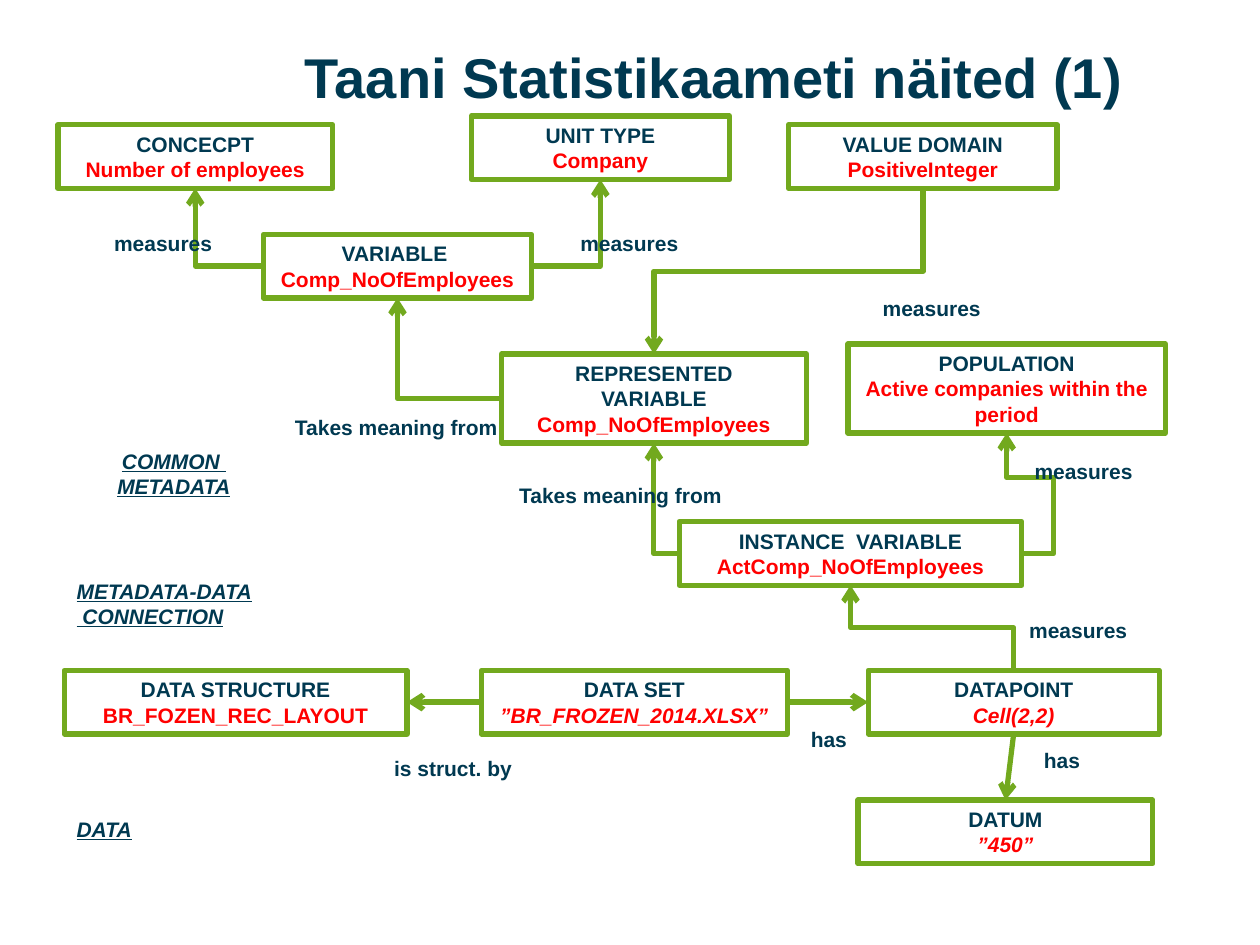
"""Build the slide of Danish statistics examples: linked metadata and data boxes."""
import pptx
import pptx.util
import pptx.dml.color
import pptx.enum.shapes
import pptx.enum.text
import pptx.oxml
import pptx.oxml.ns
from lxml import etree

COLORS = {"ink": "003951", "value": "FF0000", "line": "72A91E"}
FONT = "Arial"
SLIDE_WIDTH, SLIDE_HEIGHT = pptx.util.Inches(10), pptx.util.Inches(7.5)
COLUMNS = 100
CELL = SLIDE_WIDTH / COLUMNS
TOP, LEFT, BOTTOM, RIGHT = range(4)
LOW, TALL = 5.05, 7.07
DATA_ROW = 53.2
ALIGN = {"l": pptx.enum.text.PP_ALIGN.LEFT, "c": pptx.enum.text.PP_ALIGN.CENTER,
         "r": pptx.enum.text.PP_ALIGN.RIGHT}

TITLE = ("Taani Statistikaameti näited (1)", (23.2, 2.9, 67.4, 6.4))

CONCEPTS = {
    "variable": ((20.9, 18.6, 21.3, LOW), ["VARIABLE "], "Comp_NoOfEmployees", False),
    "represented": ((39.8, 28.1, 24.2, TALL), ["REPRESENTED", "VARIABLE"], "Comp_NoOfEmployees", False),
    "instance": ((53.9, 41.4, 27.2, LOW), ["INSTANCE  VARIABLE"], "ActComp_NoOfEmployees", False),
    "population": ((67.3, 27.3, 25.2, TALL), ["POPULATION"], "Active companies within the period", False),
    "datapoint": ((68.9, DATA_ROW, 23.1, LOW), ["DATAPOINT"], "Cell(2,2)", True),
    "datum": ((68.1, 63.5, 23.4, LOW), ["DATUM"], "”450”", True),
    "data set": ((38.2, DATA_ROW, 24.3, LOW), ["DATA SET"], "”BR_FROZEN_2014.XLSX”", True),
    "structure": ((5.1, DATA_ROW, 27.2, LOW), ["DATA STRUCTURE"], "BR_FOZEN_REC_LAYOUT", False),
    "domain": ((62.6, 9.9, 21.3, LOW), ["VALUE DOMAIN"], "PositiveInteger", False),
    "unit": ((37.4, 9.2, 20.5, LOW), ["UNIT TYPE"], "Company", False),
    "concept": ((4.6, 9.9, 21.8, LOW), ["CONCECPT"], "Number of employees", False),
}

CORNER, STEP, HOOK = "bentConnector2", "bentConnector3", "bentConnector4"
RELATIONS = [
    ("represented", LEFT, "variable", BOTTOM, CORNER),
    ("instance", LEFT, "represented", BOTTOM, CORNER),
    ("instance", RIGHT, "population", BOTTOM, HOOK),
    ("domain", BOTTOM, "represented", TOP, STEP),
    ("variable", RIGHT, "unit", BOTTOM, CORNER),
    ("variable", LEFT, "concept", BOTTOM, CORNER),
    ("datapoint", TOP, "instance", BOTTOM, STEP),
    ("data set", RIGHT, "datapoint", LEFT, None),
    ("datapoint", BOTTOM, "datum", TOP, None),
    ("data set", LEFT, "structure", RIGHT, None),
]
HOOK_BENDS = {"adj1": -211800, "adj2": 63100}

RELATION_LABELS = [
    ("Takes meaning from", "c", (33.9, 37.8, 30.7)),
    ("Takes meaning from", "c", (18.4, 32.4, 26.1)),
    ("measures", "c", (79.1, 35.9, 13.8)),
    ("measures", "c", (66.1, 23, 15.7)),
    ("measures", "c", (42.1, 17.8, 15.7)),
    ("measures", "c", (5.1, 17.8, 15.7)),
    ("measures", "l", (80.7, 48.5, 15.7)),
    ("has", "r", (79.9, 58.8, 6.8)),
    ("has", "r", (61.8, 57.2, 6.4)),
    ("is struct. by", "l", (30.3, 59.5, 11.4)),
]
LAYERS = [
    (["DATA"], "l", (5.1, 64.3, 17.6)),
    (["METADATA-DATA", " CONNECTION"], "l", (5.1, 45.4, 19.3)),
    (["COMMON ", "METADATA"], "c", (4.3, 35.1, 19)),
]


def cells(*counts):
    return [round(count * CELL) for count in counts]


def color(name):
    return pptx.dml.color.RGBColor.from_string(COLORS[name])


def write(frame, lines, align="c", size=12, wrap=True):
    frame.word_wrap = wrap
    frame.auto_size = pptx.enum.text.MSO_AUTO_SIZE.SHAPE_TO_FIT_TEXT
    for index, (text, ink, italic, underline) in enumerate(lines):
        paragraph = frame.add_paragraph() if index else frame.paragraphs[0]
        paragraph.alignment = ALIGN[align]
        run = paragraph.add_run()
        run.text = text
        font = run.font
        font.name, font.size, font.bold = FONT, pptx.util.Pt(size), True
        font.italic, font.underline = italic, underline
        font.color.rgb = color(ink)


def add_label(slide, texts, align, place, marked=False):
    height = 1 + 2 * len(texts)
    label = slide.shapes.add_textbox(*cells(*place, height))
    write(label.text_frame, [(text, "ink", marked, marked) for text in texts], align)


def add_concept(slide, place, names, value, italic):
    concept = slide.shapes.add_shape(pptx.enum.shapes.MSO_SHAPE.RECTANGLE, *cells(*place))
    concept.shadow.inherit = False
    concept.fill.background()
    concept.line.color.rgb = color("line")
    concept.line.width = pptx.util.Pt(3)
    concept.text_frame.vertical_anchor = pptx.enum.text.MSO_ANCHOR.MIDDLE
    write(concept.text_frame, [(name, "ink", False, False) for name in names]
          + [(value, "value", italic, False)])
    return concept


def side_middle(place, side):
    left, top, width, height = place
    across = {LEFT: 0, RIGHT: 1}.get(side, 0.5)
    down = {TOP: 0, BOTTOM: 1}.get(side, 0.5)
    return left + width * across, top + height * down


def add_relation(slide, concepts, source, source_side, target, target_side, bend):
    x1, y1 = side_middle(CONCEPTS[source][0], source_side)
    x2, y2 = side_middle(CONCEPTS[target][0], target_side)
    turn = 0
    if bend == STEP:
        turn = 90 if y2 > y1 else 270
        middle_x, middle_y = (x1 + x2) / 2, (y1 + y2) / 2
        half_run = abs(y2 - y1) / 2
        half_rise = (x1 - x2 if turn == 90 else x2 - x1) / 2
        x1, x2 = middle_x - half_run, middle_x + half_run
        y1, y2 = middle_y - half_rise, middle_y + half_rise
    kinds = pptx.enum.shapes.MSO_CONNECTOR
    relation = slide.shapes.add_connector(kinds.ELBOW if bend else kinds.STRAIGHT, *cells(x1, y1, x2, y2))
    relation.line.color.rgb = color("line")
    relation.line.width = pptx.util.Pt(3)
    properties = relation._element.spPr
    qn = pptx.oxml.ns.qn
    if bend:
        geometry = properties.find(qn("a:prstGeom"))
        geometry.set("prst", bend)
        if turn:
            properties.find(qn("a:xfrm")).set("rot", str(turn * 60000))
        if bend == HOOK:
            guides = geometry.find(qn("a:avLst"))
            for name, share in HOOK_BENDS.items():
                etree.SubElement(guides, qn("a:gd"), name=name, fmla=f"val {share}")
    else:
        relation.begin_connect(concepts[source], source_side)
        relation.end_connect(concepts[target], target_side)
    etree.SubElement(properties.find(qn("a:ln")), qn("a:tailEnd"), type="arrow")
    etree.SubElement(properties, qn("a:effectLst"))


def main():
    deck = pptx.Presentation()
    deck.slide_width, deck.slide_height = SLIDE_WIDTH, SLIDE_HEIGHT
    slide = deck.slides.add_slide(deck.slide_layouts[6])
    concepts = {key: add_concept(slide, *content) for key, content in CONCEPTS.items()}
    for relation in RELATIONS:
        add_relation(slide, concepts, *relation)
    for text, align, place in RELATION_LABELS:
        add_label(slide, [text], align, place)
    for texts, align, place in LAYERS:
        add_label(slide, texts, align, place, marked=True)
    heading, place = TITLE
    title = slide.shapes.add_textbox(*cells(*place))
    write(title.text_frame, [(heading, "ink", False, False)], "l", 32, wrap=False)
    deck.save("out.pptx")


if __name__ == "__main__":
    main()
